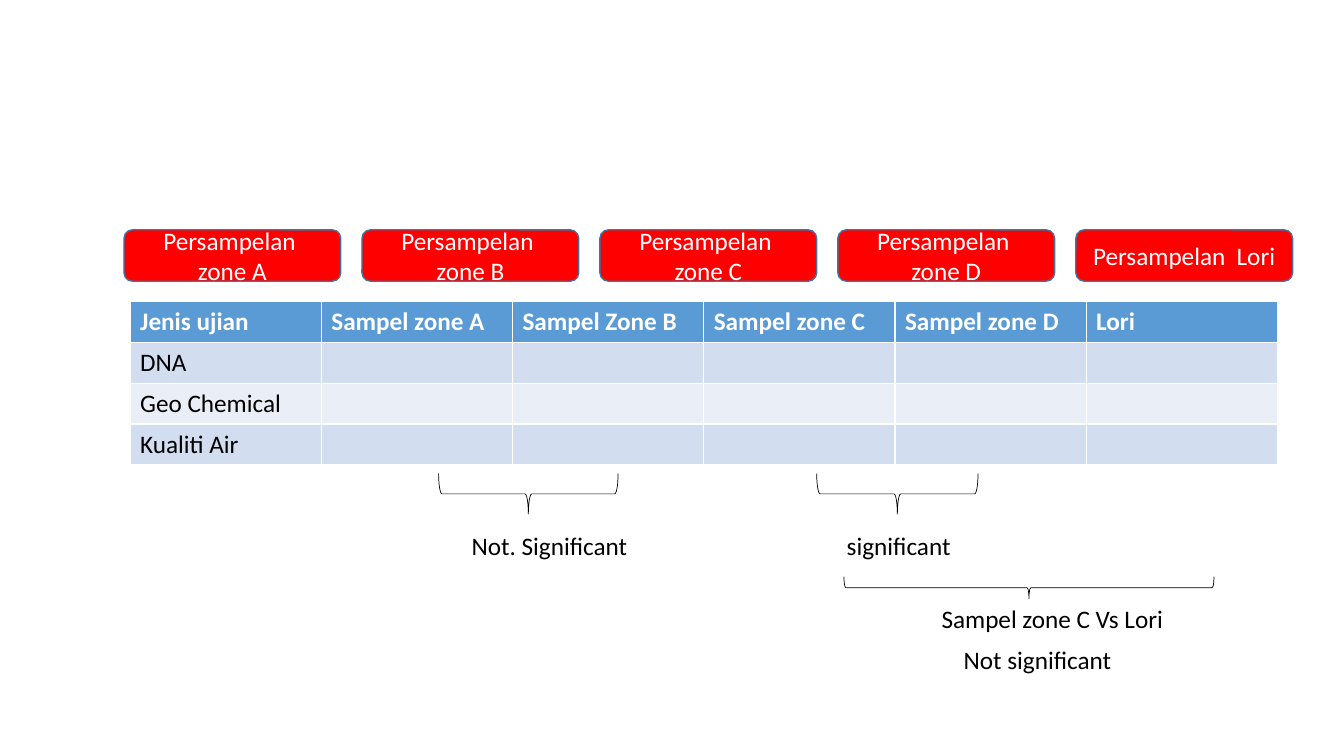
from pptx import Presentation
from pptx.dml.color import RGBColor
from pptx.enum import shapes, text
from pptx.util import Inches, Pt

WHITE = RGBColor(0xFF, 0xFF, 0xFF)
BLACK = RGBColor(0, 0, 0)
RED = RGBColor(0xFF, 0, 0)
OUTLINE = RGBColor(0x43, 0x73, 0x9E)
HEADER = RGBColor(0x5B, 0x9B, 0xD5)
BANDS = [RGBColor(0xD2, 0xDE, 0xEF), RGBColor(0xEA, 0xEF, 0xF7)]

SAMPLINGS = ["Persampelan  zone A", "Persampelan  zone B", "Persampelan  zone C",
             "Persampelan  zone D", "Persampelan  Lori"]
HEADINGS = ["Jenis ujian", "Sampel zone A", "Sampel Zone B", "Sampel zone C",
            "Sampel zone D", "Lori"]
TESTS = ["DNA", "Geo Chemical", "Kualiti Air"]
# left, top, width, depth as seen on the slide
BRACES = [(4.35, 4.7, 1.78, 0.4), (8.1, 4.7, 1.6, 0.4), (8.37, 5.72, 3.67, 0.22)]
# text, left, top, width
RESULTS = [("Not. Significant", 4.58, 5.21, 1.76), ("significant", 8.3, 5.21, 1.24),
           ("Not significant", 9.46, 6.34, 1.68), ("Sampel zone C Vs Lori", 9.24, 5.94, 2.43)]


def set_font(paragraph, color, bold=False):
    font = paragraph.font
    font.name = "Calibri"
    font.size = Pt(18)
    font.bold = bold
    font.color.rgb = color


def add_sampling(slide, label, left):
    shape = slide.shapes.add_shape(shapes.MSO_SHAPE.ROUNDED_RECTANGLE, Inches(left),
                                   Inches(2.28), Inches(2.15), Inches(0.51))
    shape.shadow.inherit = False
    shape.fill.solid()
    shape.fill.fore_color.rgb = RED
    shape.line.color.rgb = OUTLINE
    shape.line.width = Pt(1)
    frame = shape.text_frame
    frame.word_wrap = True
    frame.vertical_anchor = text.MSO_ANCHOR.MIDDLE
    paragraph = frame.paragraphs[0]
    paragraph.text = label
    paragraph.alignment = text.PP_ALIGN.CENTER
    set_font(paragraph, WHITE)


def add_tests_table(slide):
    rows = [HEADINGS] + [[test] + [""] * (len(HEADINGS) - 1) for test in TESTS]
    table = slide.shapes.add_table(len(rows), len(HEADINGS), Inches(1.29), Inches(2.99),
                                   Inches(11.38), Inches(1.62)).table
    for row, labels in enumerate(rows):
        for column, label in enumerate(labels):
            cell = table.cell(row, column)
            cell.fill.solid()
            cell.fill.fore_color.rgb = BANDS[(row - 1) % 2] if row else HEADER
            cell.text = label
            set_font(cell.text_frame.paragraphs[0], BLACK if row else WHITE, row == 0)


def add_brace(slide, left, top, width, depth):
    """Add a right brace turned to point down, keeping its centre in place."""
    shift = (width - depth) / 2
    shape = slide.shapes.add_shape(shapes.MSO_SHAPE.RIGHT_BRACE, Inches(left + shift),
                                   Inches(top - shift), Inches(depth), Inches(width))
    shape.rotation = 90
    shape.shadow.inherit = False
    shape.fill.background()
    shape.line.color.rgb = BLACK
    shape.line.width = Pt(0.5)


def add_result(slide, label, left, top, width):
    box = slide.shapes.add_textbox(Inches(left), Inches(top), Inches(width), Inches(0.4))
    frame = box.text_frame
    frame.word_wrap = False
    frame.auto_size = text.MSO_AUTO_SIZE.SHAPE_TO_FIT_TEXT
    frame.paragraphs[0].text = label
    set_font(frame.paragraphs[0], BLACK)


def main():
    presentation = Presentation()
    presentation.slide_width = Inches(13.33)
    presentation.slide_height = Inches(7.5)
    slide = presentation.slides.add_slide(presentation.slide_layouts[6])
    for index, label in enumerate(SAMPLINGS):
        add_sampling(slide, label, 1.23 + 2.36 * index)
    add_tests_table(slide)
    for brace in BRACES:
        add_brace(slide, *brace)
    for result in RESULTS:
        add_result(slide, *result)
    presentation.save("out.pptx")


if __name__ == "__main__":
    main()
